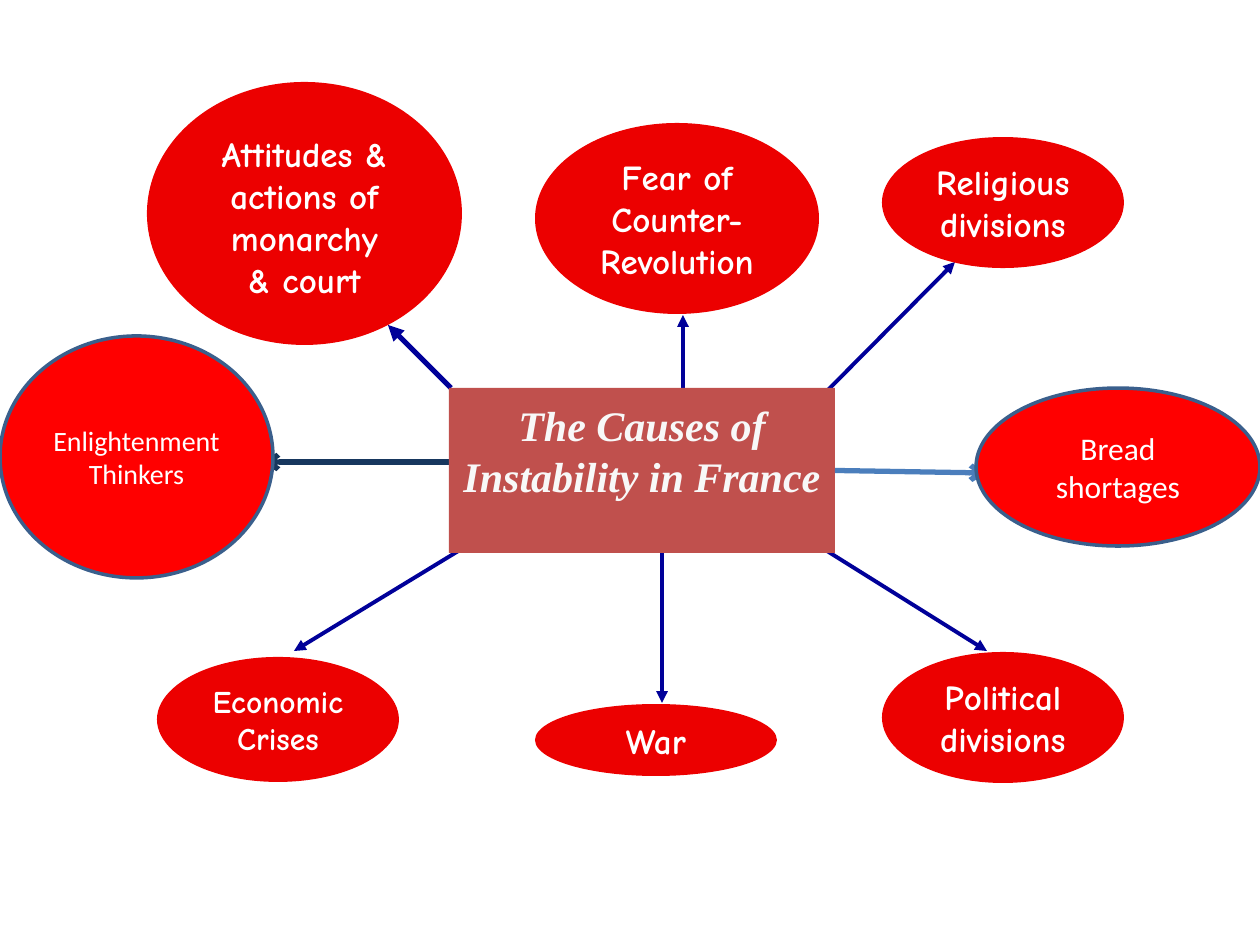
from lxml import etree
from pptx import Presentation
from pptx.dml.color import RGBColor
from pptx.enum.shapes import MSO_CONNECTOR, MSO_SHAPE
from pptx.enum.text import MSO_ANCHOR, PP_ALIGN
from pptx.oxml.ns import qn
from pptx.util import Pt

EMU_PER_PX = 914400 / 126
STRAIGHT = MSO_CONNECTOR.STRAIGHT
ELLIPSE, RECTANGLE = MSO_SHAPE.OVAL, MSO_SHAPE.RECTANGLE
TOP, MIDDLE = MSO_ANCHOR.TOP, MSO_ANCHOR.MIDDLE
CENTER = PP_ALIGN.CENTER
RIGHT_SIDE = 3

COLORS = {
    "hub": "C0504D", "hub text": "F8F8F8", "white": "FFFFFF",
    "cause": "EC0000", "side cause": "FF0000", "outline": "3A5F8C",
    "spoke": "000099", "left spoke": "17375E", "right spoke": "4B7EBC",
}

# text, left, top, width, height, font size, anchor
CAUSES = [
    ("Attitudes & actions of monarchy\v& court", 147, 82, 315, 263, 20, TOP),
    ("Fear of\vCounter-Revolution", 535, 123, 284, 191, 20, MIDDLE),
    ("Religious\vdivisions", 882, 137, 242, 131, 20, MIDDLE),
    ("Political\vdivisions", 882, 652, 242, 131, 20, MIDDLE),
    ("War", 535, 704, 242, 72, 20, MIDDLE),
    ("Economic\vCrises", 157, 657, 242, 125, 18, MIDDLE),
]
SIDE_CAUSES = [
    ("Bread shortages", 976, 388, 284, 158, 18),
    ("Enlightenment Thinkers", 0, 336, 273, 242, 16),
]
# start x, start y, end x, end y, color, width, arrowhead
SPOKES = [
    (819, 546, 987, 651, "spoke", 2.25, "triangle"),
    (662, 546, 662, 703, "spoke", 2.25, "triangle"),
    (483, 536, 294, 651, "spoke", 2.25, "triangle"),
    (451, 388, 388, 325, "spoke", 3, "triangle"),
    (683, 410, 683, 315, "spoke", 2.25, "triangle"),
    (819, 399, 955, 262, "spoke", 2.25, "triangle"),
    (451, 462, 262, 462, "left spoke", 3, "arrow"),
]


def px(length):
    return round(length * EMU_PER_PX)


def rgb(name):
    return RGBColor.from_string(COLORS[name])


def add_spoke(slide, start_x, start_y, end_x, end_y, color, width, head):
    connector = slide.shapes.add_connector(
        STRAIGHT, px(start_x), px(start_y), px(end_x), px(end_y))
    connector.line.color.rgb = rgb(color)
    connector.line.width = Pt(width)
    etree.SubElement(connector.line._get_or_add_ln(), qn("a:tailEnd"), type=head)
    etree.SubElement(connector._element.spPr, qn("a:effectLst"))
    return connector


def add_label(slide, kind, text, left, top, width, height, fill, font_name,
              size, color="white", bold=False, anchor=MIDDLE, outline=None):
    """Add a filled shape with one centred paragraph."""
    shape = slide.shapes.add_shape(kind, px(left), px(top), px(width), px(height))
    shape.shadow.inherit = False
    shape.fill.solid()
    shape.fill.fore_color.rgb = rgb(fill)
    if outline:
        shape.line.color.rgb = rgb(outline)
        shape.line.width = Pt(2)
    else:
        shape.line.fill.background()
    frame = shape.text_frame
    frame.vertical_anchor = anchor
    if anchor == TOP:
        frame.margin_top = px(12)
    paragraph = frame.paragraphs[0]
    paragraph.text = text
    paragraph.alignment = CENTER
    font = paragraph.font
    font.name, font.size, font.bold = font_name, Pt(size), bold
    font.color.rgb = rgb(color)
    return shape


def add_hub(slide):
    hub = add_label(slide, RECTANGLE, "The Causes of\vInstability in France",
                    449, 388, 386, 165, "hub", "Times New Roman", 24,
                    "hub text", bold=True, anchor=TOP)
    hub.text_frame.word_wrap = False
    hub.text_frame.paragraphs[0].font.italic = True
    return hub


def main():
    presentation = Presentation()
    presentation.slide_width, presentation.slide_height = px(1260), px(945)
    slide = presentation.slides.add_slide(presentation.slide_layouts[6])

    for spoke in SPOKES:
        add_spoke(slide, *spoke)
    hub = add_hub(slide)
    right_spoke = add_spoke(slide, 835, 471, 987, 473, "right spoke", 3, "arrow")
    right_spoke.begin_connect(hub, RIGHT_SIDE)

    for text, left, top, width, height, size, anchor in CAUSES:
        add_label(slide, ELLIPSE, text, left, top, width, height, "cause",
                  "Comic Neue", size, bold=True, anchor=anchor)
    for text, left, top, width, height, size in SIDE_CAUSES:
        add_label(slide, ELLIPSE, text, left, top, width, height, "side cause",
                  "Calibri", size, outline="outline")

    presentation.save("out.pptx")


if __name__ == "__main__":
    main()
